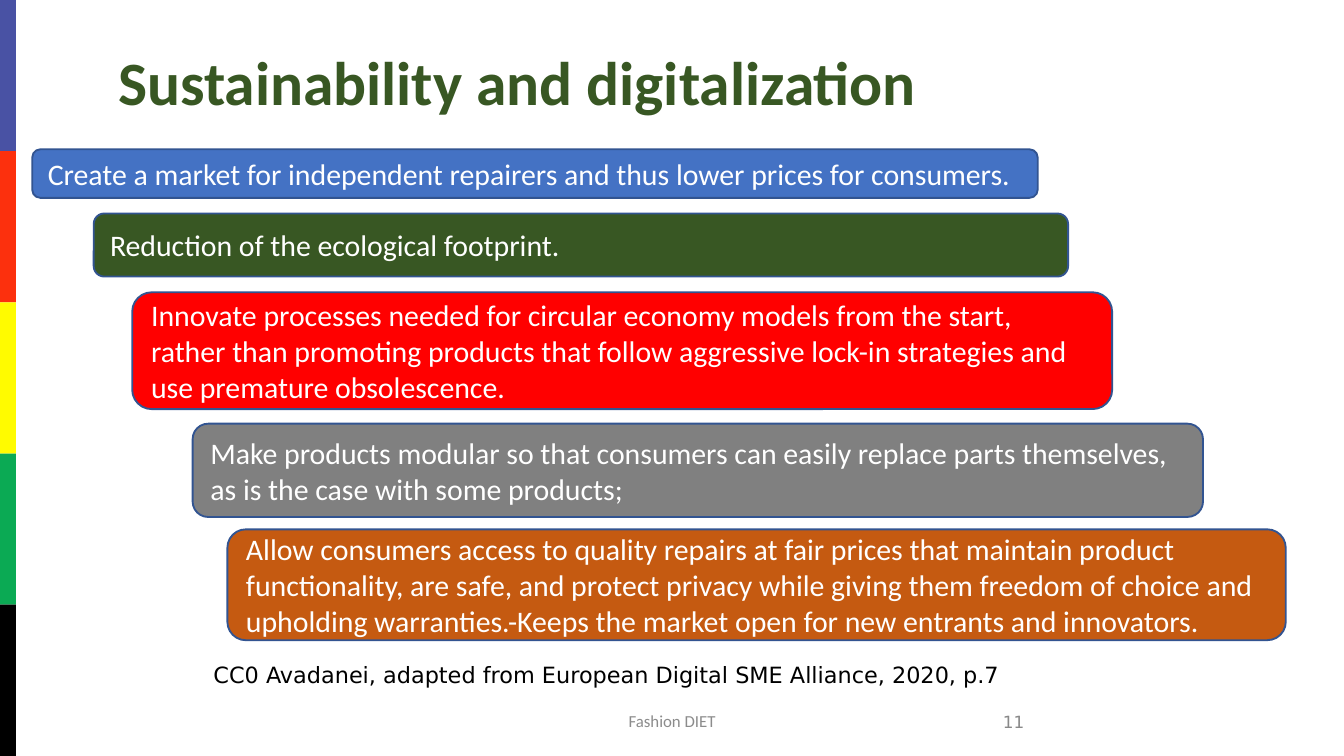
from dataclasses import dataclass

from pptx import Presentation
from pptx.dml.color import RGBColor
from pptx.enum.shapes import MSO_SHAPE
from pptx.enum.text import MSO_ANCHOR, PP_ALIGN
from pptx.util import Pt


@dataclass(frozen=True)
class Theme:
    heading_font: str = "Calibri"
    note_font: str = "DejaVu Sans"
    title_size: float = 33
    body_size: float = 16
    source_size: float = 12
    footer_size: float = 9
    title: str = "385723"
    body: str = "FFFFFF"
    source: str = "000000"
    footer: str = "8C8C8C"
    number: str = "898989"
    outline: str = "325491"
    stripes: tuple = ("4952A4", "FC300D", "FFFB00", "0BAA54", "000000")


THEME = Theme()
SLIDE_WIDTH, SLIDE_HEIGHT = 720, 405
STRIPE_WIDTH = 8.6

TITLE = "Sustainability and digitalization"
SOURCE = "CC0 Avadanei, adapted from European Digital SME Alliance, 2020, p.7"
FOOTER = "Fashion DIET"
SLIDE_NUMBER = "11"

# Text, fill colour, (left, top, width, height)
STEPS = [
    ("Create a market for independent repairers and thus lower prices for consumers.",
     "4472C4", (17.3, 80, 538.6, 26)),
    ("Reduction of the ecological footprint.",
     "385723", (50.2, 114.4, 522, 33.8)),
    ("Innovate processes needed for circular economy models from the start, "
     "rather than promoting products that follow aggressive lock-in strategies "
     "and use premature obsolescence.",
     "FF0000", (70.8, 156.6, 525, 62.6)),
    ("Make products modular so that consumers can easily replace parts "
     "themselves, as is the case with some products;",
     "808080", (103.2, 227, 541.3, 50)),
    ("Allow consumers access to quality repairs at fair prices that maintain "
     "product functionality, are safe, and protect privacy while giving them "
     "freedom of choice and upholding warranties.-Keeps the market open for "
     "new entrants and innovators.",
     "C55A11", (121.8, 283.6, 567, 59.4)),
]


def write_text(shape, text, font_name, size, color, bold=False,
               align=PP_ALIGN.LEFT, anchor=MSO_ANCHOR.MIDDLE):
    frame = shape.text_frame
    frame.word_wrap = True
    frame.vertical_anchor = anchor
    paragraph = frame.paragraphs[0]
    paragraph.alignment = align
    run = paragraph.add_run()
    run.text = text
    run.font.name = font_name
    run.font.size = Pt(size)
    run.font.bold = bold
    run.font.color.rgb = RGBColor.from_string(color)


def add_label(slide, box, *text_settings, **options):
    label = slide.shapes.add_textbox(*map(Pt, box))
    write_text(label, *text_settings, **options)


def add_filled_shape(slide, kind, box, fill, outline=None):
    shape = slide.shapes.add_shape(kind, *map(Pt, box))
    shape.shadow.inherit = False
    shape.fill.solid()
    shape.fill.fore_color.rgb = RGBColor.from_string(fill)
    if outline:
        shape.line.color.rgb = RGBColor.from_string(outline)
        shape.line.width = Pt(1)
    else:
        shape.line.fill.background()
    return shape


def add_stripes(slide):
    height = SLIDE_HEIGHT / len(THEME.stripes)
    for index, color in enumerate(THEME.stripes):
        box = (0, index * height, STRIPE_WIDTH, height)
        add_filled_shape(slide, MSO_SHAPE.RECTANGLE, box, color)


def add_steps(slide):
    for text, fill, box in STEPS:
        step = add_filled_shape(slide, MSO_SHAPE.ROUNDED_RECTANGLE, box, fill,
                                THEME.outline)
        write_text(step, text, THEME.heading_font, THEME.body_size, THEME.body)


def main():
    presentation = Presentation()
    presentation.slide_width = Pt(SLIDE_WIDTH)
    presentation.slide_height = Pt(SLIDE_HEIGHT)
    slide = presentation.slides.add_slide(presentation.slide_layouts[6])

    add_stripes(slide)
    add_label(slide, (238.5, 375.4, 243, 21.6), FOOTER, THEME.heading_font,
              THEME.footer_size, THEME.footer, align=PP_ALIGN.CENTER)
    add_label(slide, (393.8, 375.8, 162, 21.6), SLIDE_NUMBER, THEME.note_font,
              THEME.footer_size, THEME.number, align=PP_ALIGN.RIGHT)
    add_steps(slide)
    add_label(slide, (107.3, 350.6, 496, 21.6), SOURCE, THEME.note_font,
              THEME.source_size, THEME.source, anchor=MSO_ANCHOR.TOP)
    add_label(slide, (56.2, 20.2, 515.5, 47.5), TITLE, THEME.heading_font,
              THEME.title_size, THEME.title, bold=True, anchor=MSO_ANCHOR.TOP)

    presentation.save("out.pptx")


if __name__ == "__main__":
    main()
